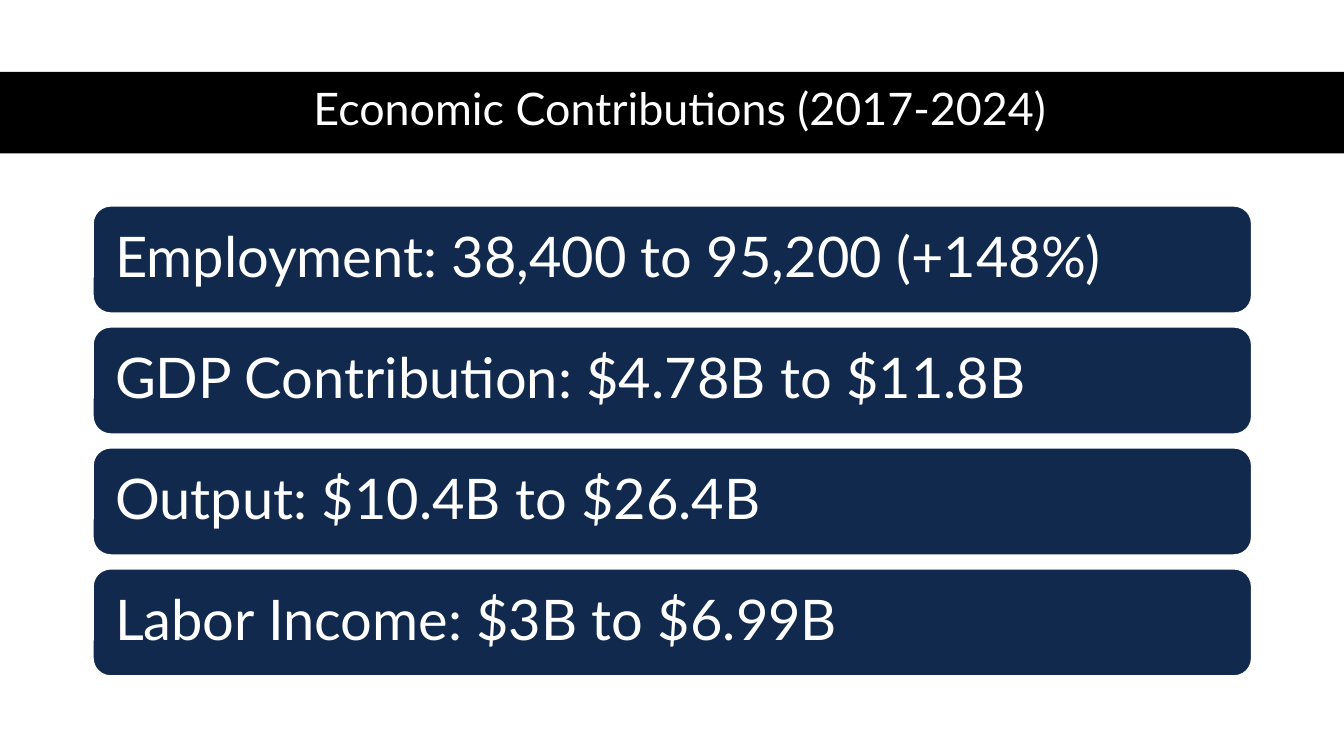
from pptx import Presentation
from pptx.dml.color import RGBColor
from pptx.enum.shapes import MSO_SHAPE as Shape
from pptx.enum.text import MSO_ANCHOR as Anchor, MSO_AUTO_SIZE as AutoSize, PP_ALIGN as Align
from pptx.util import Inches, Pt

TITLE = "Economic Contributions (2017-2024)"
CONTRIBUTIONS = [
    "Employment: 38,400 to 95,200 (+148%)",
    "GDP Contribution: $4.78B to $11.8B",
    "Output: $10.4B to $26.4B",
    "Labor Income: $3B to $6.99B",
]
CARD_TOP, CARD_STEP = 27.2, 16


def color(value):
    return RGBColor.from_string(value)


class ContributionSlide:
    font_name = "Lato"
    white = "FFFFFF"
    black = "000000"
    navy = "11294C"

    def __init__(self, presentation):
        self.width = presentation.slide_width
        self.height = presentation.slide_height
        self.slide = presentation.slides.add_slide(presentation.slide_layouts[5])

    def box(self, left, top, width, height):
        return (
            int(self.width * left / 100),
            int(self.height * top / 100),
            int(self.width * width / 100),
            int(self.height * height / 100),
        )

    def set_text(self, shape, text, size, alignment):
        frame = shape.text_frame
        frame.text = text
        frame.word_wrap = True
        frame.auto_size = AutoSize.NONE
        frame.vertical_anchor = Anchor.MIDDLE
        paragraph = frame.paragraphs[0]
        paragraph.alignment = alignment
        paragraph.line_spacing = 0.9
        paragraph.font.name = self.font_name
        paragraph.font.size = Pt(size)
        paragraph.font.color.rgb = color(self.white)

    def filled(self, kind, bounds, fill):
        shape = self.slide.shapes.add_shape(kind, *self.box(*bounds))
        shape.shadow.inherit = False
        shape.fill.solid()
        shape.fill.fore_color.rgb = color(fill)
        return shape

    def band(self, *bounds):
        band = self.filled(Shape.RECTANGLE, bounds, self.black)
        band.line.fill.background()
        title = self.slide.shapes.title
        title.element.addprevious(band.element)

    def title(self, text, *bounds):
        title = self.slide.shapes.title
        title.left, title.top, title.width, title.height = self.box(*bounds)
        self.set_text(title, text, 32, Align.CENTER)

    def card(self, text, *bounds):
        card = self.filled(Shape.ROUNDED_RECTANGLE, bounds, self.navy)
        card.line.color.rgb = color(self.white)
        card.line.width = Pt(1.5)
        self.set_text(card, text, 40, Align.LEFT)
        frame = card.text_frame
        frame.margin_left = frame.margin_right = Inches(0.17)


def main():
    presentation = Presentation()
    presentation.slide_width = Inches(13.33)
    presentation.slide_height = Inches(7.5)
    page = ContributionSlide(presentation)
    page.band(0, 9.5, 100, 10.8)
    page.title(TITLE, 4.6, 9.33, 92, 10.8)
    for index, text in enumerate(CONTRIBUTIONS):
        page.card(text, 6.9, CARD_TOP + index * CARD_STEP, 86.25, 14.25)
    presentation.save("out.pptx")


if __name__ == "__main__":
    main()
